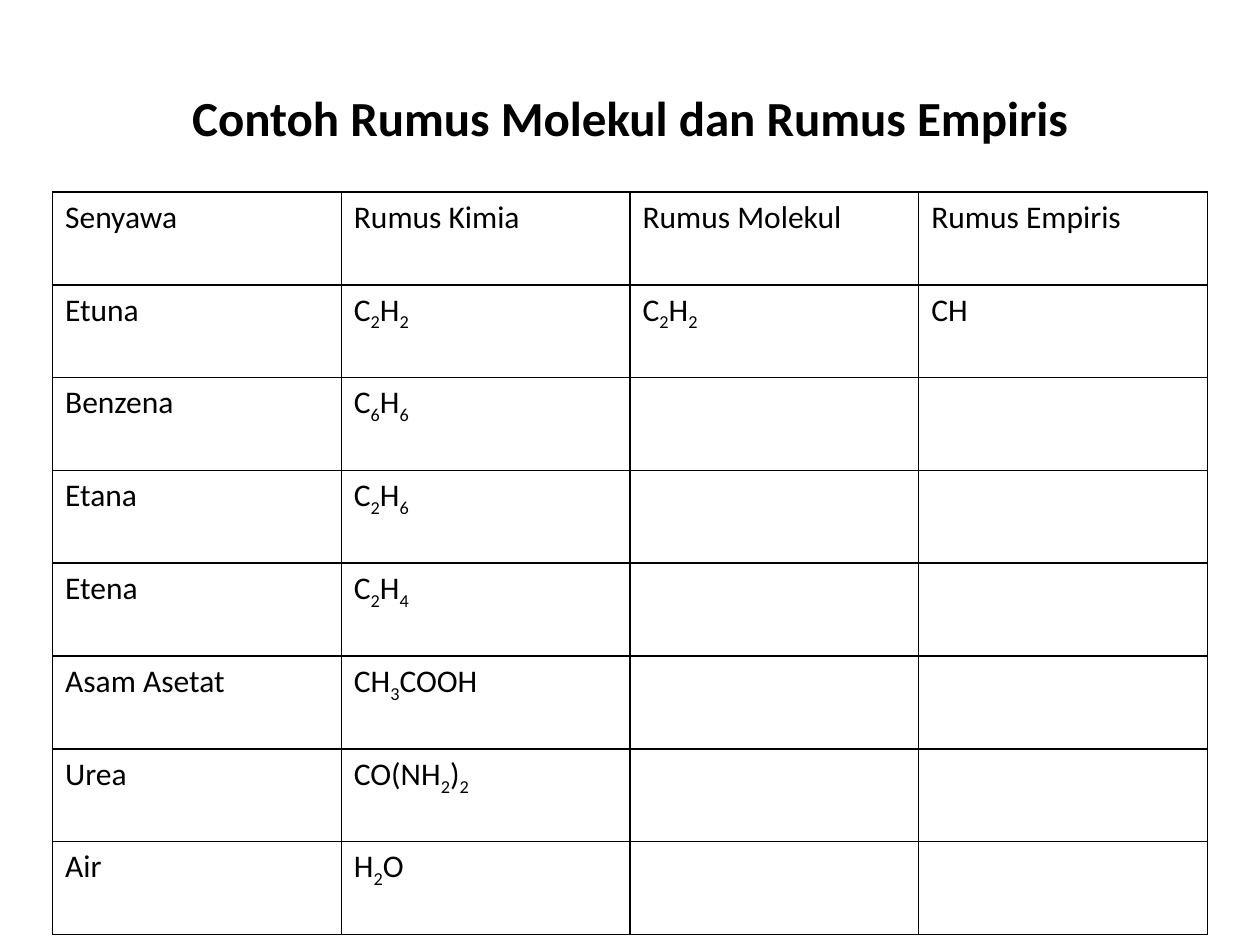
import dataclasses

import lxml.etree
import pptx
import pptx.dml.color
import pptx.enum.text
import pptx.oxml.ns
import pptx.util

Cm = pptx.util.Cm
Pt = pptx.util.Pt
BLACK = pptx.dml.color.RGBColor(0, 0, 0)
WHITE = pptx.dml.color.RGBColor(255, 255, 255)
FONT = "Calibri"
HEADS = ("Senyawa", "Rumus Kimia", "Rumus Molekul", "Rumus Empiris")


@dataclasses.dataclass(frozen=True)
class Matter:
    name: str
    kimia: str
    molar: str = ""
    basic: str = ""


ROWS = (
    Matter("Etuna", "C2H2", "C2H2", "CH"),
    Matter("Benzena", "C6H6"),
    Matter("Etana", "C2H6"),
    Matter("Etena", "C2H4"),
    Matter("Asam Asetat", "CH3COOH"),
    Matter("Urea", "CO(NH2)2"),
    Matter("Air", "H2O"),
)


def style(para: pptx.text.text._Paragraph, size: int, bold: bool) -> None:
    para.font.name = FONT
    para.font.size = Pt(size)
    para.font.bold = bold
    para.font.color.rgb = BLACK


def write(para: pptx.text.text._Paragraph, text: str) -> None:
    run = None
    low = False
    for sign in text:
        if run is None or sign.isdigit() != low:
            run = para.add_run()
            low = sign.isdigit()
            if low:
                run._r.get_or_add_rPr().set("baseline", "-25000")
        run.text += sign
    style(para, 18, False)


def border(cell: pptx.table._Cell) -> None:
    props = cell._tc.get_or_add_tcPr()
    qn = pptx.oxml.ns.qn
    for side in ("lnL", "lnR", "lnT", "lnB"):
        line = lxml.etree.SubElement(props, qn(f"a:{side}"), w=str(Pt(1)))
        fill = lxml.etree.SubElement(line, qn("a:solidFill"))
        lxml.etree.SubElement(fill, qn("a:srgbClr"), val=str(BLACK))


def add_title(slide: pptx.slide.Slide, text: str) -> None:
    title = slide.shapes.title
    title.left, title.top = Cm(1.27), Cm(0.76)
    title.width, title.height = Cm(22.86), Cm(3.18)
    title.text_frame.vertical_anchor = pptx.enum.text.MSO_ANCHOR.MIDDLE
    para = title.text_frame.paragraphs[0]
    para.text = text
    para.alignment = pptx.enum.text.PP_ALIGN.CENTER
    style(para, 28, True)


def add_grid(slide: pptx.slide.Slide, rows: tuple[Matter, ...]) -> None:
    lines = [HEADS, *map(dataclasses.astuple, rows)]
    table = slide.shapes.add_table(
        len(lines), len(HEADS), Cm(1.06), Cm(3.87), Cm(23.28), Cm(14.97)
    ).table
    table.first_row = False
    table.horz_banding = False
    for row, texts in zip(table.rows, lines):
        for cell, text in zip(row.cells, texts):
            border(cell)
            cell.fill.solid()
            cell.fill.fore_color.rgb = WHITE
            write(cell.text_frame.paragraphs[0], text)


def main() -> None:
    deck = pptx.Presentation()
    deck.slide_width, deck.slide_height = Cm(25.4), Cm(19.05)
    slide = deck.slides.add_slide(deck.slide_layouts[5])
    add_title(slide, "Contoh Rumus Molekul dan Rumus Empiris")
    add_grid(slide, ROWS)
    deck.save("out.pptx")


if __name__ == "__main__":
    main()
